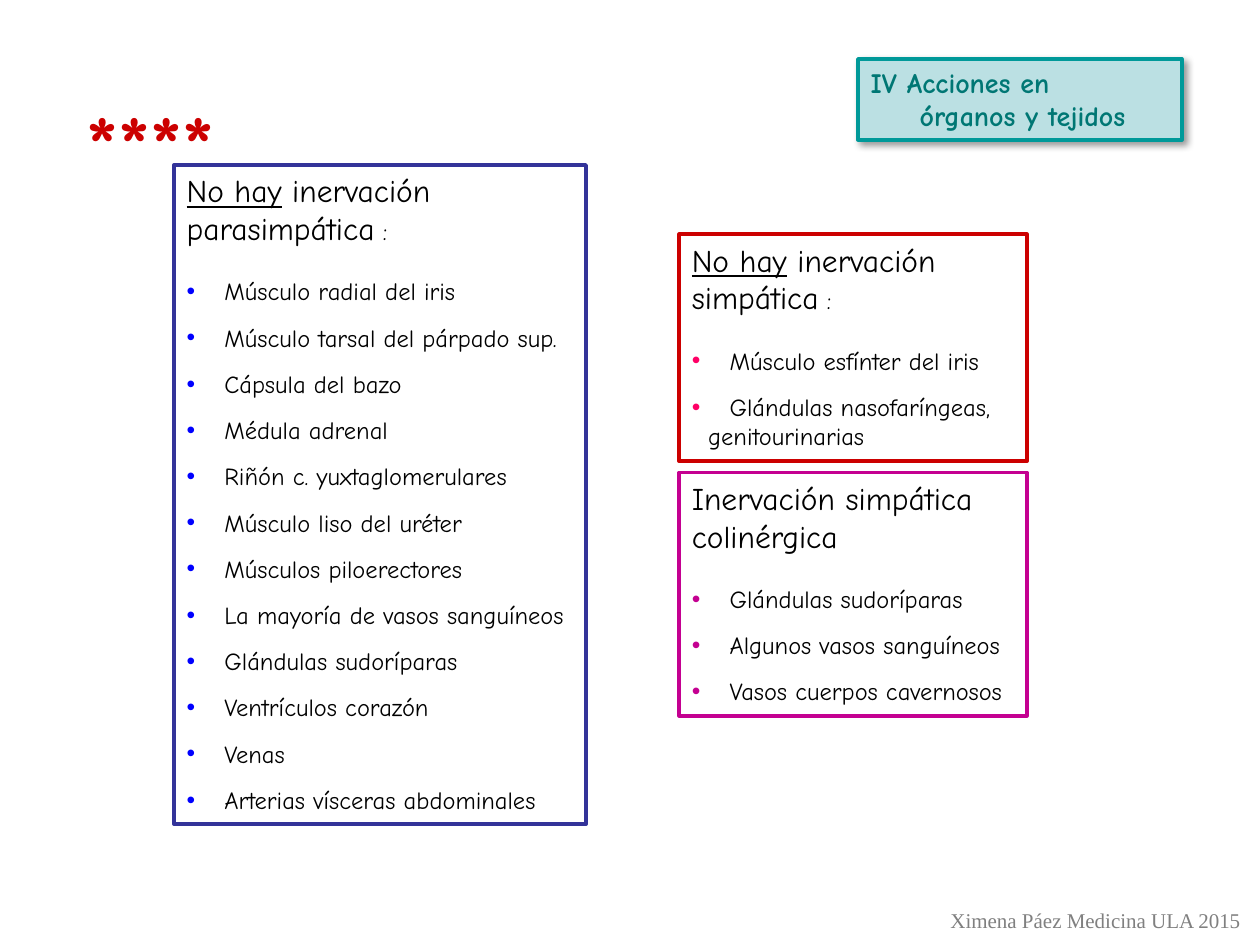
"""Build a slide on organs that lack parasympathetic or sympathetic innervation."""
from pptx import Presentation
from pptx.dml.color import RGBColor
from pptx.enum.text import MSO_ANCHOR, MSO_AUTO_SIZE, PP_ALIGN
from pptx.oxml import parse_xml
from pptx.oxml.ns import nsdecls
from pptx.util import Pt

TOP = MSO_ANCHOR.TOP
NO_FIT = MSO_AUTO_SIZE.NONE
LEFT = PP_ALIGN.LEFT
CENTER = PP_ALIGN.CENTER
COLORS = {
    "black": "000000", "gray": "808080", "red": "CC0000", "navy": "333399",
    "blue": "0000FF", "pink": "FF0066", "magenta": "C40091",
    "pale": "BBE0E3", "teal": "009999", "dark teal": "007774",
}
SHADOW = (
    '<a:effectLst {}><a:outerShdw blurRad="{}" dist="{}" dir="2700000" algn="tl" rotWithShape="0">'
    '<a:srgbClr val="{}"><a:alpha val="{}"/></a:srgbClr></a:outerShdw></a:effectLst>'
)


def add_span(para, text, size=14, color="black", font="Comic Neue", bold=False,
             underline=False, indent=0, hanging=0, before=0, bullet=None, align=LEFT):
    """Add formatted text to a paragraph and set the paragraph's layout."""
    properties = para._p.get_or_add_pPr()
    properties.set("marL", str(Pt(indent)))
    properties.set("indent", str(-Pt(hanging)))
    if not para.runs:
        marks = ["<a:buNone {}/>"]
        if bullet:
            marks = [f'<a:buClr {{}}><a:srgbClr val="{COLORS[bullet]}"/></a:buClr>',
                     '<a:buChar {} char="•"/>']
        for mark in marks:
            properties.append(parse_xml(mark.format(nsdecls("a"))))
        para.space_before = Pt(before)
        para.alignment = align
    span = para.add_run()
    span.text = text
    span.font.name = font
    span.font.size = Pt(size)
    span.font.bold = bold
    span.font.underline = underline
    span.font.color.rgb = RGBColor.from_string(COLORS[color])
    return span


def set_box(box, left, top, width, height, line=None):
    """Place a box, outline it and return its text frame."""
    box.left, box.top, box.width, box.height = Pt(left), Pt(top), Pt(width), Pt(height)
    if line:
        box.line.color.rgb = RGBColor.from_string(COLORS[line])
        box.line.width = Pt(2.25)
    frame = box.text_frame
    frame.word_wrap = True
    frame.auto_size = NO_FIT
    frame.vertical_anchor = TOP
    return frame


deck = Presentation()
deck.slide_width, deck.slide_height = Pt(720), Pt(540)
page = deck.slides.add_slide(deck.slide_layouts[4])

title = page.shapes.title
frame = set_box(title, 490.3, 33.8, 185, 46.1, "teal")
title.fill.solid()
title.fill.fore_color.rgb = RGBColor.from_string(COLORS["pale"])
title._element.spPr.append(parse_xml(
    SHADOW.format(nsdecls("a"), Pt(4), Pt(3), COLORS["black"], 40000)))
add_span(frame.paragraphs[0], "IV Acciones en", size=16, color="dark teal", bold=True)
add_span(frame.add_paragraph(), "órganos y tejidos", size=16, color="dark teal",
         bold=True, indent=28)

panels = [
    ((99.4, 94.3, 235.4, 376.6), "navy", "blue",
     [("No hay", 18, True), (" inervación parasimpática", 18, False), (" :", 14, False)],
     ["Músculo radial del iris", "Músculo tarsal del párpado sup.", "Cápsula del bazo",
      "Médula adrenal", "Riñón c. yuxtaglomerulares", "Músculo liso del uréter",
      "Músculos piloerectores", "La mayoría de vasos sanguíneos", "Glándulas sudoríparas",
      "Ventrículos corazón", "Venas", "Arterias vísceras abdominales"]),
    ((388.1, 133.9, 198.7, 129.6), "red", "pink",
     [("No hay", 18, True), (" inervación simpática", 18, False), (" :", 14, False)],
     ["Músculo esfínter del iris", "Glándulas nasofaríngeas,"]),
    ((388.1, 270, 198.7, 139), "magenta", "magenta",
     [("Inervación simpática colinérgica", 18, False)],
     ["Glándulas sudoríparas", "Algunos vasos sanguíneos", "Vasos cuerpos cavernosos"]),
]
*bodies, spare = [holder for holder in page.placeholders if holder.placeholder_format.idx > 0]
spare.element.getparent().remove(spare.element)
frames = []
for body, (place, line, bullet, heading, items) in zip(bodies, panels):
    frame = set_box(body, *place, line)
    frames.append(frame)
    for text, size, underline in heading:
        add_span(frame.paragraphs[0], text, size=size, underline=underline)
    for number, item in enumerate(items):
        add_span(frame.add_paragraph(), item, bullet=bullet, indent=21.6, hanging=21.6,
                 before=9.6 if number else 16.8)
add_span(frames[1].add_paragraph(), "genitourinarias", indent=9.4)

stars = page.shapes.add_textbox(0, 0, 0, 0)
frame = set_box(stars, 42.5, 49, 118.8, 65.5)
span = add_span(frame.paragraphs[0], "****", size=48, color="red", bold=True)
span.font.fill._xPr.find("{*}solidFill").addnext(parse_xml(
    SHADOW.format(nsdecls("a"), 0, Pt(2), COLORS["black"], 100000)))

credit = page.shapes.add_textbox(0, 0, 0, 0)
frame = set_box(credit, 535, 514.8, 182.2, 21.6)
add_span(frame.paragraphs[0], "Ximena Páez Medicina ULA 2015", size=12, color="gray",
         font="Times New Roman", align=CENTER)
frame.word_wrap = False

deck.save("out.pptx")
